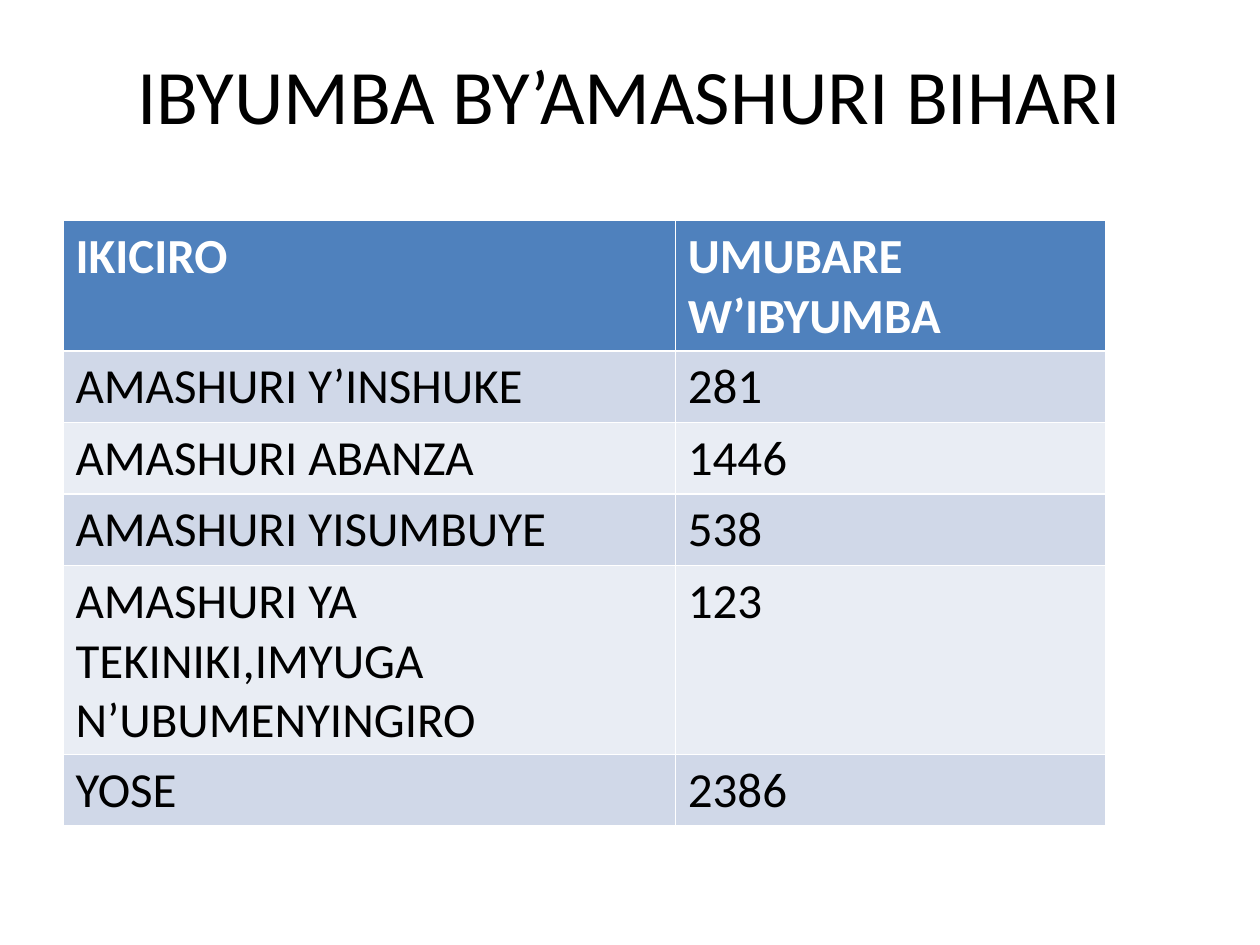
from dataclasses import dataclass

from pptx import Presentation
from pptx.dml.color import RGBColor
from pptx.enum.text import MSO_ANCHOR, PP_ALIGN
from pptx.util import Inches, Pt

LEFT, CENTER = PP_ALIGN.LEFT, PP_ALIGN.CENTER
MIDDLE = MSO_ANCHOR.MIDDLE


@dataclass(frozen=True)
class Theme:
    font: str = "Calibri"
    title_size: int = 44
    cell_size: int = 28
    ink: str = "000000"
    header_ink: str = "FFFFFF"
    header_fill: str = "4F81BD"
    bands: tuple = ("D0D8E8", "E9EDF4")


theme = Theme()


def write(frame, text, size=theme.cell_size, color=theme.ink, bold=False, align=LEFT):
    frame.word_wrap = True
    paragraph = frame.paragraphs[0]
    paragraph.alignment = align
    run = paragraph.add_run()
    run.text = text
    run.font.name = theme.font
    run.font.size = Pt(size)
    run.font.bold = bold
    run.font.color.rgb = RGBColor.from_string(color)


deck = Presentation()
deck.slide_width, deck.slide_height = Inches(10), Inches(7.5)
slide = deck.slides.add_slide(deck.slide_layouts[6])
margin = Inches(0.5)

# Title, centred between the margins
title = slide.shapes.add_textbox(
    margin, Inches(0.3), deck.slide_width - 2 * margin, Inches(0.88))
title.text_frame.vertical_anchor = MIDDLE
write(title.text_frame, "IBYUMBA BY’AMASHURI BIHARI", size=theme.title_size, align=CENTER)

# Classrooms by school level
classrooms = [
    ("IKICIRO", "UMUBARE W’IBYUMBA"),
    ("AMASHURI Y’INSHUKE", "281"),
    ("AMASHURI ABANZA", "1446"),
    ("AMASHURI YISUMBUYE", "538"),
    ("AMASHURI YA TEKINIKI,IMYUGA N’UBUMENYINGIRO", "123"),
    ("YOSE", "2386"),
]
column_widths = [Inches(4.86), Inches(3.42)]
table_height = Inches(4.8)
table_frame = slide.shapes.add_table(
    len(classrooms), len(column_widths), margin, Inches(1.75),
    sum(column_widths), table_height)
table = table_frame.table
for column, width in zip(table.columns, column_widths):
    column.width = width

# Rows start at a minimum height and grow with their text
for r, entries in enumerate(classrooms):
    table.rows[r].height = Inches(0.41)
    header = r == 0
    fill = theme.header_fill if header else theme.bands[(r - 1) % 2]
    for c, entry in enumerate(entries):
        cell = table.cell(r, c)
        cell.fill.solid()
        cell.fill.fore_color.rgb = RGBColor.from_string(fill)
        write(cell.text_frame, entry, bold=header,
              color=theme.header_ink if header else theme.ink)
table_frame.height = table_height

deck.save("out.pptx")
